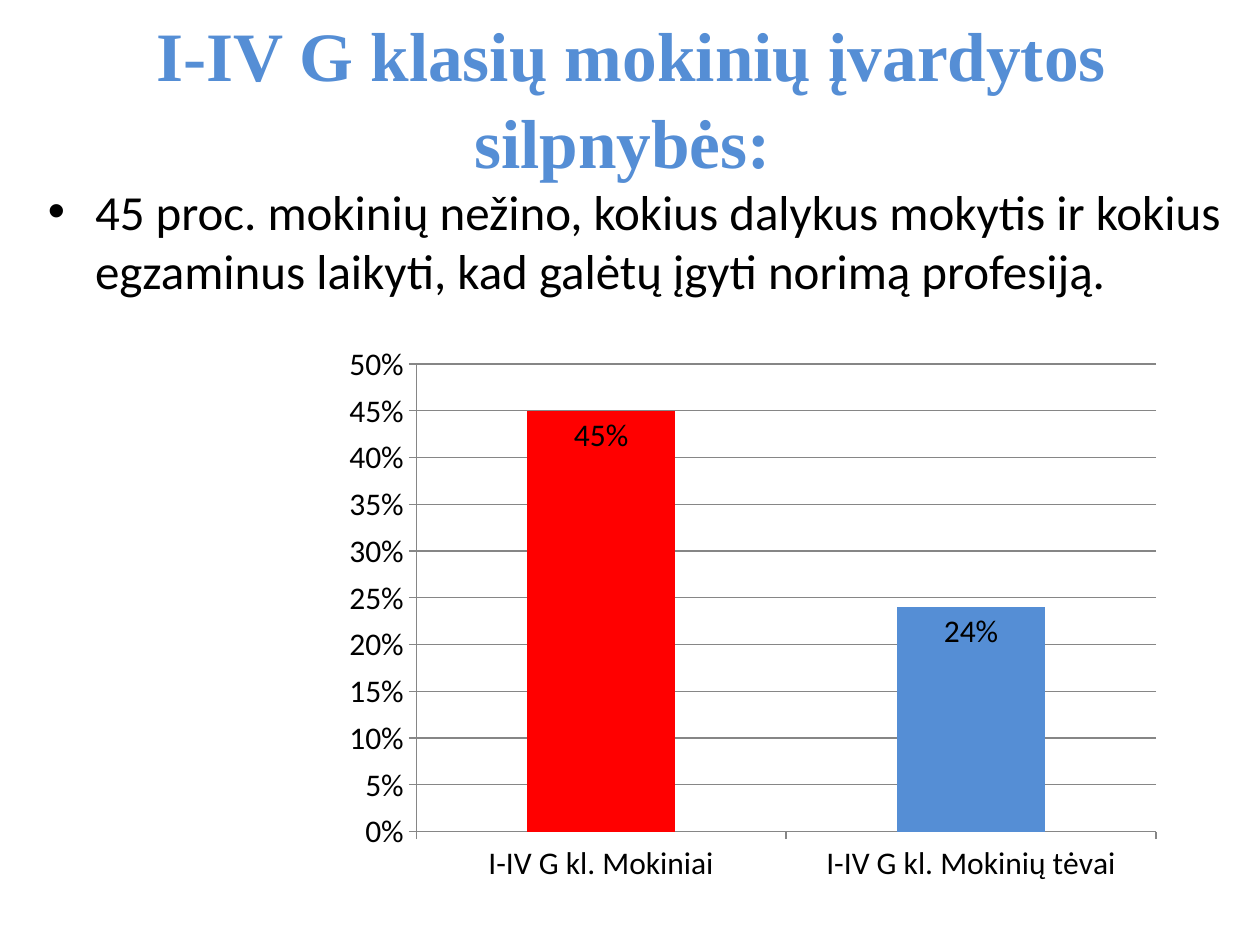
from dataclasses import dataclass

from lxml import etree
from pptx import Presentation
from pptx.chart.data import CategoryChartData
from pptx.dml.color import RGBColor
from pptx.enum.chart import XL_CHART_TYPE, XL_LABEL_POSITION, XL_TICK_MARK
from pptx.enum.text import MSO_ANCHOR, PP_ALIGN
from pptx.oxml.ns import qn
from pptx.util import Pt

COLUMN = XL_CHART_TYPE.COLUMN_CLUSTERED
INSIDE_END = XL_LABEL_POSITION.INSIDE_END
TICK_OUT = XL_TICK_MARK.OUTSIDE
TOP, MIDDLE = MSO_ANCHOR.TOP, MSO_ANCHOR.MIDDLE
LEFT, CENTER = PP_ALIGN.LEFT, PP_ALIGN.CENTER


@dataclass(frozen=True)
class Theme:
    blue: RGBColor = RGBColor(0x55, 0x8E, 0xD5)
    red: RGBColor = RGBColor(0xFF, 0x00, 0x00)
    black: RGBColor = RGBColor(0x00, 0x00, 0x00)
    gray: RGBColor = RGBColor(0x86, 0x86, 0x86)
    title_font: str = "Times New Roman"
    body_font: str = "Calibri"
    title_size: float = 39.6
    body_size: float = 28
    chart_size: float = 18


THEME = Theme()


def apply(target, values):
    for name, value in values.items():
        setattr(target, name, value)


def set_font(font, name, size, color, bold=False):
    apply(font, {"name": name, "size": Pt(size), "bold": bold})
    font.color.rgb = color


def add_text(s, box, text, anchor, para, font):
    sp = s.shapes.add_textbox(*map(Pt, box))
    tf = sp.text_frame
    apply(tf, {"word_wrap": True, "vertical_anchor": anchor})
    p = tf.paragraphs[0]
    apply(p, para)
    r = p.add_run()
    r.text = text
    set_font(r.font, *font)
    return p


def add_bullet(p, indent):
    pPr = p._p.get_or_add_pPr()
    pPr.set("marL", str(Pt(indent)))
    pPr.set("indent", str(-Pt(indent)))
    etree.SubElement(pPr, qn("a:buFont")).set("typeface", "Arial")
    etree.SubElement(pPr, qn("a:buChar")).set("char", "•")


def add_column_chart(s, box, values, colors):
    data = CategoryChartData(number_format="0%")
    data.categories = list(values)
    data.add_series("Series 1", list(values.values()))
    chart = s.shapes.add_chart(COLUMN, *map(Pt, box), data).chart
    apply(chart, {"has_legend": False, "has_title": False})
    set_font(chart.font, THEME.body_font, THEME.chart_size, THEME.black)

    for axis in (chart.category_axis, chart.value_axis):
        axis.major_tick_mark = TICK_OUT
        axis.format.line.color.rgb = THEME.gray
    axis = chart.value_axis
    apply(axis, {"minimum_scale": 0, "maximum_scale": 0.5,
                 "major_unit": 0.05, "has_major_gridlines": True})
    axis.major_gridlines.format.line.color.rgb = THEME.gray
    number = {"number_format": "0%", "number_format_is_linked": False}
    apply(axis.tick_labels, number)

    plot = chart.plots[0]
    apply(plot, {"gap_width": 150, "vary_by_categories": False,
                 "has_data_labels": True})
    apply(plot.data_labels,
          {"show_value": True, "position": INSIDE_END, **number})
    for i, color in enumerate(colors):
        fill = plot.series[0].points[i].format.fill
        fill.solid()
        fill.fore_color.rgb = color


def main():
    prs = Presentation()
    apply(prs, {"slide_width": Pt(720), "slide_height": Pt(540)})
    s = prs.slides.add_slide(prs.slide_layouts[6])

    add_text(s, (36.7, 9.4, 648, 90),
             "I-IV G klasių mokinių įvardytos silpnybės: ", MIDDLE,
             {"alignment": CENTER, "line_spacing": 1.05},
             (THEME.title_font, THEME.title_size, THEME.blue, True))
    p = add_text(s, (20.2, 100, 686, 356.4),
                 "45 proc. mokinių nežino, kokius dalykus mokytis ir kokius "
                 "egzaminus laikyti, kad galėtų įgyti norimą profesiją.", TOP,
                 {"alignment": LEFT, "space_before": Pt(5.6)},
                 (THEME.body_font, THEME.body_size, THEME.black))
    add_bullet(p, 27)
    add_column_chart(s, (190, 190.8, 480.2, 319.7),
                     {"I-IV G kl. Mokiniai": 0.45,
                      "I-IV G kl. Mokinių tėvai": 0.24},
                     (THEME.red, THEME.blue))
    prs.save("out.pptx")


if __name__ == "__main__":
    main()
